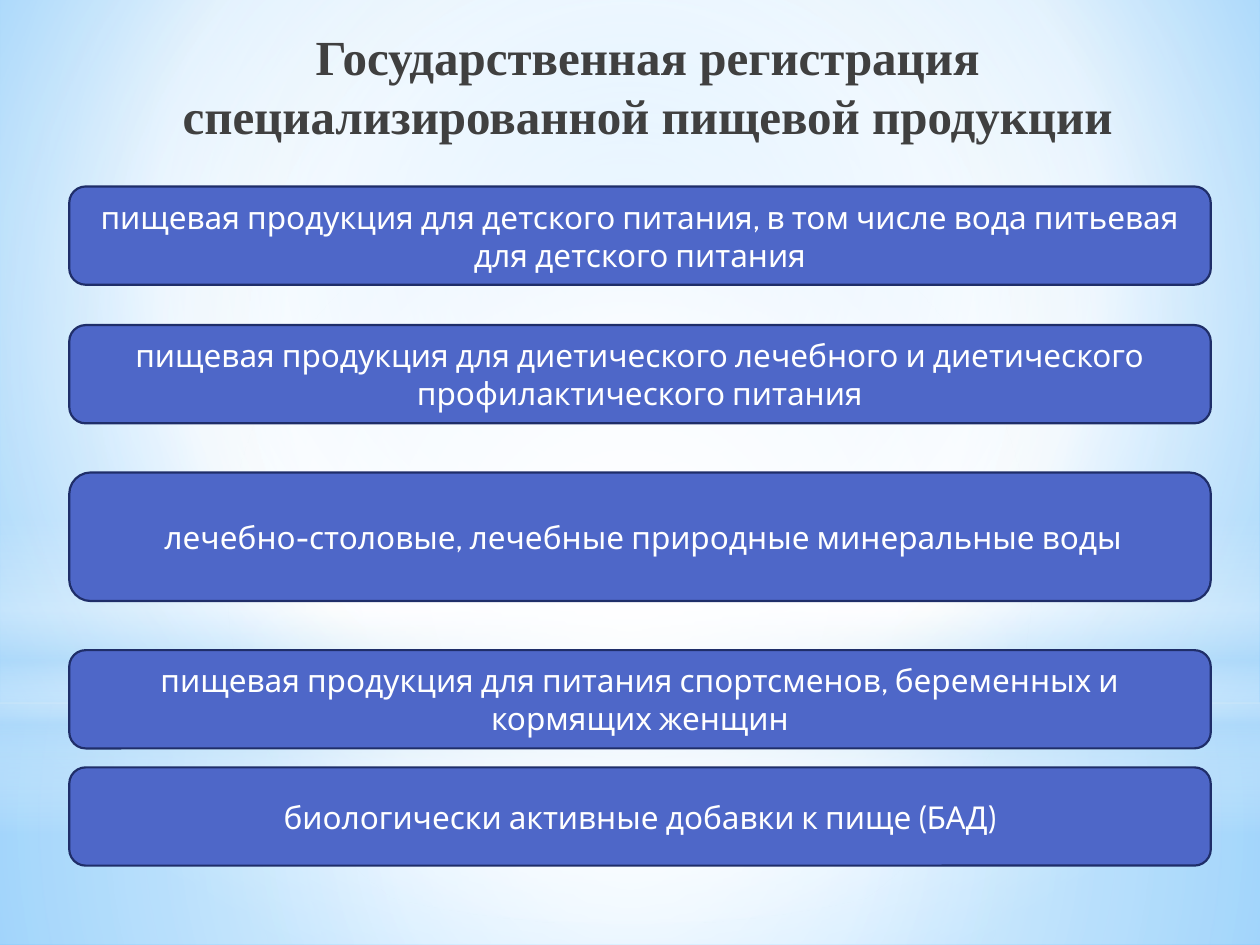
import pptx
import pptx.util
import pptx.dml.color
import pptx.enum.shapes
import pptx.enum.text
import pptx.oxml.ns
import lxml.etree

RGB = pptx.dml.color.RGBColor
KIND = pptx.enum.shapes.MSO_SHAPE
MID = pptx.enum.text.MSO_ANCHOR.MIDDLE
CENTER = pptx.enum.text.PP_ALIGN.CENTER

WHITE = RGB(0xFF, 0xFF, 0xFF)
PALE = RGB(0xB4, 0xDC, 0xFA)
SKY = RGB(0x9E, 0xD5, 0xFF)
AZURE = RGB(0x5B, 0xB9, 0xFF)
BLUE = RGB(0x4E, 0x67, 0xC8)
NAVY = RGB(0x1F, 0x2E, 0x69)
GREY = RGB(0x40, 0x40, 0x40)

HALF = (50, 50, 50, 50)
VEILS = [
    (KIND.RECTANGLE, 55.8, 19.2, [(0, WHITE, 91), (37, WHITE, 76), (100, PALE, 79)], HALF),
    (KIND.RECTANGLE, 0, 55.8, [(0, WHITE, 89), (48, WHITE, 62), (100, PALE, 79)], HALF),
    (KIND.RECTANGLE, 41.2, 25,
     [(0, WHITE, 0), (29, WHITE, 30), (45, PALE, 40),
      (55, WHITE, 26), (65, PALE, 60), (100, WHITE, 0)], None),
    (KIND.OVAL, 17.5, 55.8, [(0, WHITE, 100), (56, WHITE, 0)], HALF),
]
BARS = [
    (14.8, 7.8, "пищевая продукция для детского питания, в том числе вода питьевая для детского питания"),
    (25.8, 7.8, "пищевая продукция для диетического лечебного и диетического профилактического питания"),
    (37.5, 10.2, " лечебно-столовые, лечебные природные минеральные воды"),
    (51.6, 7.8, "пищевая продукция для питания спортсменов, беременных и кормящих женщин"),
    (60.9, 7.8, "биологически активные добавки к пище (БАД)"),
]


def dress(item, vals):
    for name, val in vals.items():
        setattr(item, name, val)


class Deck:
    cols, rows = 100, 75
    head = {"size": pptx.util.Pt(28), "name": "Times New Roman", "bold": True}
    body = {"size": pptx.util.Pt(18), "name": "Cabin", "bold": False}

    def __init__(self):
        self.show = pptx.Presentation()
        dress(self.show, {"slide_width": pptx.util.Inches(10),
                          "slide_height": pptx.util.Inches(7.5)})
        self.slide = self.show.slides.add_slide(self.show.slide_layouts[5])

    def place(self, col, row, wide, high):
        step_x = self.show.slide_width / self.cols
        step_y = self.show.slide_height / self.rows
        return [round(n) for n in (col * step_x, row * step_y, wide * step_x, high * step_y)]

    def blend(self, owner, fill, stops, focus):
        fill.gradient()
        tag = pptx.oxml.ns.qn
        add = lxml.etree.SubElement
        grad = next(owner.iter(tag("a:gradFill")))
        for part in list(grad):
            grad.remove(part)
        group = add(grad, tag("a:gsLst"))
        for pos, tint, solid in stops:
            stop = add(group, tag("a:gs"), pos=str(pos * 1000))
            hue = add(stop, tag("a:srgbClr"), val=str(tint))
            add(hue, tag("a:alpha"), val=str(solid * 1000))
        if focus:
            way = add(grad, tag("a:path"), path="circle")
            sides = {side: str(n * 1000) for side, n in zip("ltrb", focus)}
            add(way, tag("a:fillToRect"), sides)
        else:
            add(grad, tag("a:lin"), ang="5400000", scaled="0")

    def back(self, stops, focus):
        self.blend(self.slide.element, self.slide.background.fill, stops, focus)

    def shape(self, kind, *spot):
        item = self.slide.shapes.add_shape(kind, *self.place(*spot))
        item.shadow.inherit = False
        return item

    def veil(self, kind, row, high, stops, focus):
        item = self.shape(kind, 0, row, self.cols, high)
        item.line.fill.background()
        self.blend(item.element, item.fill, stops, focus)

    def label(self, item, text, font, tint):
        frame = item.text_frame
        dress(frame, {"text": text, "word_wrap": True, "vertical_anchor": MID,
                      "auto_size": pptx.enum.text.MSO_AUTO_SIZE.NONE})
        para = frame.paragraphs[0]
        para.alignment = CENTER
        run = para.runs[0]
        dress(run.font, font)
        run.font.color.rgb = tint

    def title(self, text, *spot):
        item = self.slide.shapes.title
        dress(item, dict(zip(("left", "top", "width", "height"), self.place(*spot))))
        self.label(item, text, self.head, GREY)
        item.text_frame.margin_left += pptx.util.Inches(0.2)
        self.slide.shapes.element.append(item.element)

    def bar(self, row, high, text):
        item = self.shape(KIND.ROUNDED_RECTANGLE, 5.5, row, 90.6, high)
        item.fill.solid()
        item.fill.fore_color.rgb = BLUE
        item.line.color.rgb = NAVY
        item.line.width = pptx.util.Pt(1.25)
        self.label(item, text, self.body, WHITE)


def main():
    deck = Deck()
    deck.back([(0, SKY, 100), (60, WHITE, 100), (100, AZURE, 100)], (20, 10, 20, 60))
    for veil in VEILS:
        deck.veil(*veil)
    deck.title("Государственная регистрация специализированной пищевой продукции",
               5.1, 1.3, 90.6, 11)
    for bar in BARS:
        deck.bar(*bar)
    deck.show.save("out.pptx")


if __name__ == "__main__":
    main()
